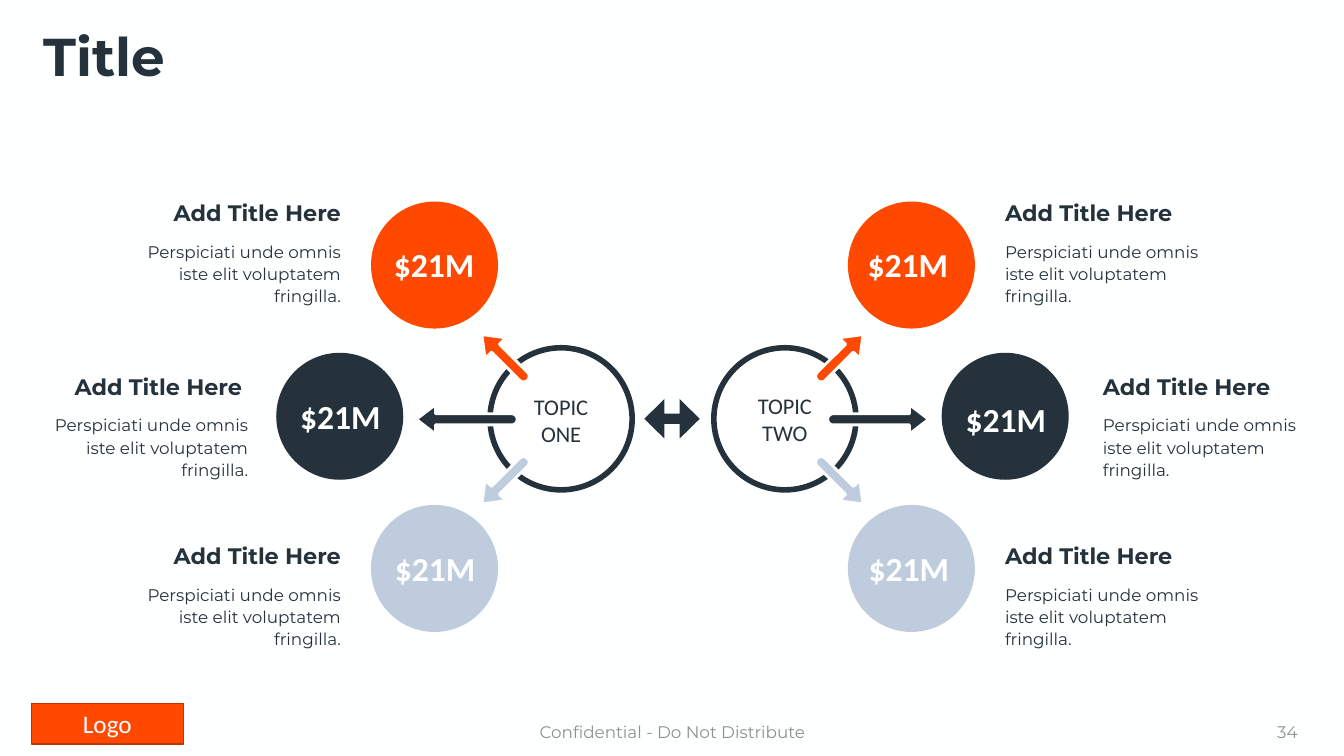
"""Build a slide that compares two topics, each with three branches."""
import math
from dataclasses import dataclass

from lxml import etree
from pptx import Presentation
from pptx import util as u
from pptx.dml.color import RGBColor
from pptx.enum import shapes, text
from pptx.shapes.autoshape import Shape
from pptx.slide import Slide

PX = 9144
AXIS_X, AXIS_Y = 667, 416
HUB, DISC = 141, 126
HEAD_LENGTH, HEAD_HALF, SHAFT_HALF = 19, 14.5, 5.5

PAPER = RGBColor(0xFE, 0xFF, 0xFF)
WHITE = RGBColor(0xFF, 0xFF, 0xFF)
NAVY = RGBColor(0x25, 0x32, 0x3C)
ORANGE = RGBColor(0xFF, 0x49, 0x00)
MIST = RGBColor(0xBE, 0xCC, 0xDD)
LOGO_FILL = RGBColor(0xFF, 0x48, 0x00)
LOGO_EDGE = RGBColor(0xBD, 0x35, 0x00)
GREY = RGBColor(0x8E, 0x90, 0x92)

LEFT, CENTER, RIGHT = text.PP_ALIGN.LEFT, text.PP_ALIGN.CENTER, text.PP_ALIGN.RIGHT
BODY = "Perspiciati unde omnis iste elit voluptatem fringilla."


@dataclass(frozen=True)
class Style:
    """Look of a piece of text."""
    size: int
    color: RGBColor
    font: str = "Montserrat"
    bold: bool = False
    spacing: float = 1.0


@dataclass(frozen=True)
class Row:
    """What the left and right branches at one height share."""
    color: RGBColor
    disc_y: int
    headline_y: int
    tip_reach: int
    tip_y: int
    rise: int
    arrow_length: int


@dataclass(frozen=True)
class Branch:
    """Horizontal places of one branch, and the top of its amount."""
    row: Row
    side: int
    disc_x: int
    amount_x: int
    amount_y: int
    headline_x: int
    body_x: int


@dataclass(frozen=True)
class Topic:
    """One of the two hubs."""
    label: str
    hub_x: int
    label_x: int
    label_y: int


HEADLINE = Style(16, NAVY, bold=True)
DETAIL = Style(12, NAVY, spacing=1.1)
AMOUNT = Style(24, PAPER, "Calibri", bold=True)
TOPIC = Style(16, NAVY, "Calibri")
FOOTER = Style(12, GREY)

TOP = Row(ORANGE, 200, 193, 189, 332, 45, 64)
MIDDLE = Row(NAVY, 350, 365, 254, AXIS_Y, 0, 100)
BOTTOM = Row(MIST, 501, 533, 189, 500, -45, 64)
BRANCHES = [
    Branch(TOP, -1, 368, 360, 237, 159, 131),
    Branch(MIDDLE, -1, 274, 267, 388, 61, 39),
    Branch(BOTTOM, -1, 368, 361, 539, 159, 131),
    Branch(TOP, 1, 841, 830, 237, 987, 987),
    Branch(MIDDLE, 1, 934, 927, 391, 1084, 1084),
    Branch(BOTTOM, 1, 841, 831, 539, 987, 987),
]
TOPICS = [
    Topic("TOPIC ONE", 486, 505, 385),
    Topic("TOPIC TWO", 708, 727, 384),
]


def paint(shape: Shape, fill: RGBColor, line: RGBColor | None = None, weight: int = 0) -> None:
    """Give a shape a flat fill and an optional outline."""
    shape.shadow.inherit = False
    shape.fill.solid()
    shape.fill.fore_color.rgb = fill
    if line is None:
        shape.line.fill.background()
    else:
        shape.line.color.rgb = line
        shape.line.width = u.Pt(weight)


def add_preset(slide: Slide, kind: shapes.MSO_SHAPE, x: int, y: int, width: int, height: int) -> Shape:
    """Add a preset shape placed in px."""
    return slide.shapes.add_shape(kind, x * PX, y * PX, width * PX, height * PX)


def write(shape: Shape, words: str, style: Style, align: text.PP_ALIGN) -> None:
    """Put one styled paragraph into a shape."""
    shape.text_frame.text = words
    paragraph = shape.text_frame.paragraphs[0]
    paragraph.alignment = align
    if style.spacing != 1.0:
        paragraph.line_spacing = style.spacing
    font = paragraph.runs[0].font
    font.name, font.size, font.bold = style.font, u.Pt(style.size), style.bold
    font.color.rgb = style.color


def add_label(slide: Slide, x: int, y: int, width: int, height: int, words: str, style: Style,
              align: text.PP_ALIGN = CENTER, wrap: bool = True, grow: bool = True) -> Shape:
    """Add a text box placed in px."""
    label = slide.shapes.add_textbox(x * PX, y * PX, width * PX, height * PX)
    label.text_frame.word_wrap = wrap
    if grow:
        label.text_frame.auto_size = text.MSO_AUTO_SIZE.SHAPE_TO_FIT_TEXT
    write(label, words, style, align)
    return label


def add_arrow(slide: Slide, branch: Branch) -> None:
    """Draw an arrow with a round tail that points from the hub to the disc."""
    row = branch.row
    tail = SHAFT_HALF - row.arrow_length
    cap = [(tail - SHAFT_HALF * math.sin(math.radians(turn)),
            SHAFT_HALF * math.cos(math.radians(turn))) for turn in range(0, 181, 15)]
    outline = [(0, 0), (-HEAD_LENGTH, HEAD_HALF), (-HEAD_LENGTH, SHAFT_HALF), *cap,
               (-HEAD_LENGTH, -SHAFT_HALF), (-HEAD_LENGTH, -HEAD_HALF)]
    cos, sin = math.cos(math.radians(row.rise)), math.sin(math.radians(row.rise))
    points = [((AXIS_X + branch.side * (row.tip_reach + along * cos + across * sin)) * PX,
               (row.tip_y - along * sin + across * cos) * PX) for along, across in outline]
    builder = slide.shapes.build_freeform(*points[0])
    builder.add_line_segments(points[1:], close=True)
    paint(builder.convert_to_shape(), row.color, WHITE, 2)


def add_branch_text(slide: Slide, branch: Branch) -> None:
    """Write the headline, the detail and the amount of a branch."""
    align = RIGHT if branch.side < 0 else LEFT
    top = branch.row.headline_y
    add_label(slide, branch.headline_x, top, 189, 37, "Add Title Here", HEADLINE, align, wrap=False)
    add_label(slide, branch.body_x, top + 40, 217, 74, BODY, DETAIL, align)
    add_label(slide, branch.amount_x, branch.amount_y, 141, 50, "$21M", AMOUNT)


def add_frame(slide: Slide) -> None:
    """Add the title, the logo block and the footer."""
    add_label(slide, 33, 25, 1263, 67, "Title", Style(38, NAVY, bold=True, spacing=0.9), LEFT, grow=False)
    logo = add_preset(slide, shapes.MSO_SHAPE.RECTANGLE, 31, 698, 151, 40)
    paint(logo, LOGO_FILL, LOGO_EDGE, 1)
    write(logo, "Logo", Style(18, PAPER, "Calibri"), CENTER)
    notice = add_label(slide, 442, 706, 450, 40, "Confidential - Do Not Distribute", FOOTER, grow=False)
    number = add_label(slide, 997, 706, 300, 40, "34", FOOTER, RIGHT, grow=False)
    for footer in (notice, number):
        footer.text_frame.vertical_anchor = text.MSO_ANCHOR.MIDDLE


def main() -> None:
    """Build and save the slide."""
    deck = Presentation()
    deck.slide_width, deck.slide_height = 1333 * PX, 750 * PX
    slide = deck.slides.add_slide(deck.slide_layouts[6])
    slide.background.fill.solid()
    slide.background.fill.fore_color.rgb = PAPER
    add_frame(slide)
    for branch in BRANCHES:
        disc = add_preset(slide, shapes.MSO_SHAPE.OVAL, branch.disc_x, branch.row.disc_y, DISC, DISC)
        paint(disc, branch.row.color)
    for topic in TOPICS:
        hub = add_preset(slide, shapes.MSO_SHAPE.OVAL, topic.hub_x, 345, HUB, HUB)
        paint(hub, WHITE, NAVY, 4)
        add_label(slide, topic.label_x, topic.label_y, 103, 64, topic.label, TOPIC)
    link = add_preset(slide, shapes.MSO_SHAPE.LEFT_RIGHT_ARROW, 639, 396, 55, 39)
    link.adjustments[0], link.adjustments[1] = 0.26, 0.51
    paint(link, NAVY)
    for branch in BRANCHES:
        add_arrow(slide, branch)
        add_branch_text(slide, branch)
    deck.save("out.pptx")


if __name__ == "__main__":
    main()
